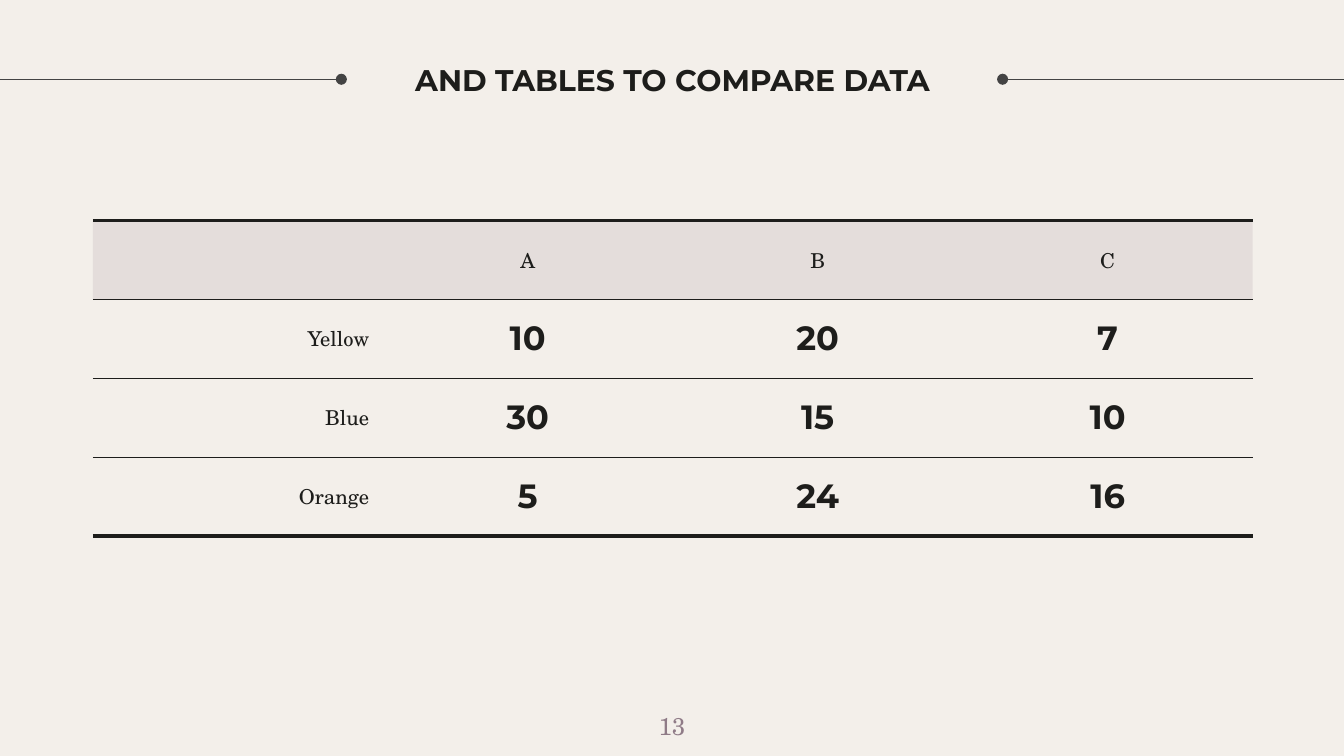
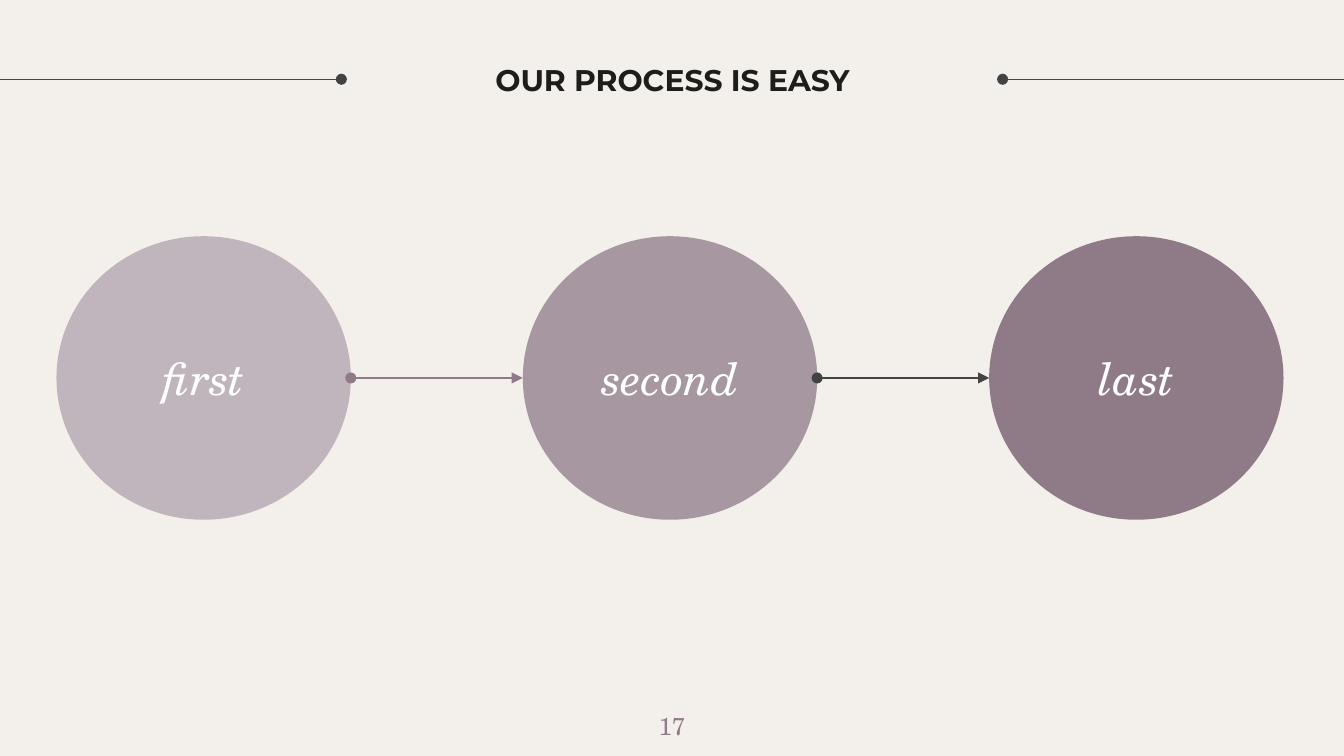
"""Build two slides: a comparison table and a three-step process."""
from lxml import etree
from pptx import Presentation
from pptx import util as u
from pptx.dml.color import RGBColor
from pptx.enum import shapes, text
from pptx.oxml import ns

INK = RGBColor(0x1D, 0x1D, 0x1B)
GREY = RGBColor(0x43, 0x43, 0x43)
CREAM = RGBColor(0xF3, 0xEF, 0xEA)
WHITE = RGBColor(0xFF, 0xFF, 0xFF)
MAUVE = RGBColor(0x8F, 0x7B, 0x87)
MID_MAUVE = RGBColor(0xA7, 0x97, 0xA1)
PALE_MAUVE = RGBColor(0xC0, 0xB5, 0xBC)
SANS, SERIF = "Montserrat", "TeX Gyre Schola"
CENTER, RIGHT = text.PP_ALIGN.CENTER, text.PP_ALIGN.RIGHT
TOP, MIDDLE = text.MSO_ANCHOR.TOP, text.MSO_ANCHOR.MIDDLE

SLIDE_WIDTH = 10
SLIDE_HEIGHT = SLIDE_WIDTH * 9 / 16
RULE_Y = 0.59
RULES = [(2.54, 0), (7.46, SLIDE_WIDTH)]

TABLE_TITLE, TABLE_NUMBER = "AND TABLES TO COMPARE DATA", 13
TABLE_ROWS = [
    ("", "A", "B", "C"),
    ("Yellow", "10", "20", "7"),
    ("Blue", "30", "15", "10"),
    ("Orange", "5", "24", "16"),
]
TABLE_BOX = (0.69, 1.64, 8.63, 2.35)
THIN, THICK = 0.75, 2.25
HEADER_ALPHA = 15

PROCESS_TITLE, PROCESS_NUMBER = "OUR PROCESS IS EASY", 17
STEPS = [("first", PALE_MAUVE), ("second", MID_MAUVE), ("last", MAUVE)]
ARROW_COLORS = [MAUVE, GREY]
STEP_LEFT, STEP_WIDTH, STEP_HEIGHT, STEP_PITCH = 0.42, 2.19, 2.11, 3.47
STEP_TOP = (SLIDE_HEIGHT - STEP_HEIGHT) / 2


def inches(*lengths):
    return [u.Inches(length) for length in lengths]


def write(frame, words, font, size, color, align=CENTER, bold=False, italic=False):
    frame.text = words
    para = frame.paragraphs[0]
    para.alignment = align
    for span in para.runs:
        span.font.name, span.font.size = font, u.Pt(size)
        span.font.bold, span.font.italic = bold, italic
        span.font.color.rgb = color


def set_up_frame(frame, anchor):
    frame.word_wrap = True
    frame.vertical_anchor = anchor
    frame.margin_left = frame.margin_right = u.Inches(0.1)
    frame.margin_top = frame.margin_bottom = u.Inches(0.1)


def add_text(page, place, words, font, size, color, anchor, bold=False):
    frame = page.shapes.add_textbox(*inches(*place)).text_frame
    set_up_frame(frame, anchor)
    write(frame, words, font, size, color, bold=bold)


def add_line(page, start, end, y, color, arrow=False):
    line = page.shapes.add_connector(
        shapes.MSO_CONNECTOR.STRAIGHT, *inches(start, y, end, y))
    line.line.color.rgb = color
    line.line.width = u.Pt(THIN)
    outline = line.line._get_or_add_ln()
    etree.SubElement(outline, ns.qn("a:headEnd"), type="oval")
    if arrow:
        etree.SubElement(outline, ns.qn("a:tailEnd"), type="triangle")
    etree.SubElement(line._element.spPr, ns.qn("a:effectLst"))


def add_page(deck, title, number):
    page = deck.slides.add_slide(deck.slide_layouts[6])
    page.background.fill.solid()
    page.background.fill.fore_color.rgb = CREAM
    for start, end in RULES:
        add_line(page, start, end, RULE_Y, GREY)
    add_text(page, (2.54, 0.12, 4.93, 0.94), title, SANS, 16, INK, MIDDLE, bold=True)
    add_text(page, (4.7, 5.19, 0.6, 0.43), str(number), SERIF, 13, MAUVE, TOP)
    return page


def set_borders(cell, top, bottom):
    properties = cell._tc.get_or_add_tcPr()
    widths = {"a:lnL": 0, "a:lnR": 0, "a:lnT": top, "a:lnB": bottom}
    for position, (tag, width) in enumerate(widths.items()):
        border = etree.Element(ns.qn(tag), w=str(u.Pt(width)))
        if width:
            fill = etree.SubElement(border, ns.qn("a:solidFill"))
            etree.SubElement(fill, ns.qn("a:srgbClr"), val=str(INK))
        else:
            etree.SubElement(border, ns.qn("a:noFill"))
        properties.insert(position, border)


def fill_cell(cell, is_header):
    if not is_header:
        cell.fill.background()
        return
    cell.fill.solid()
    cell.fill.fore_color.rgb = MAUVE
    color = cell._tc.tcPr.find(".//" + ns.qn("a:srgbClr"))
    etree.SubElement(color, ns.qn("a:alpha"), val=str(HEADER_ALPHA * 1000))


def add_comparison(page):
    row_count, column_count = len(TABLE_ROWS), len(TABLE_ROWS[0])
    table = page.shapes.add_table(row_count, column_count, *inches(*TABLE_BOX)).table
    table.first_row = table.horz_banding = False
    for r, row in enumerate(TABLE_ROWS):
        for c, words in enumerate(row):
            cell = table.cell(r, c)
            cell.vertical_anchor = MIDDLE
            cell.margin_left = cell.margin_right = u.Inches(0.1)
            cell.margin_top = cell.margin_bottom = u.Inches(0.07)
            is_value = r > 0 and c > 0
            font, size = (SANS, 18) if is_value else (SERIF, 11)
            align = RIGHT if c == 0 else CENTER
            write(cell.text_frame, words, font, size, INK, align, bold=is_value)
            fill_cell(cell, r == 0)
            set_borders(cell, THICK if r == 0 else THIN,
                        THICK if r == row_count - 1 else THIN)


def add_process(page):
    lefts = [STEP_LEFT + i * STEP_PITCH for i in range(len(STEPS))]
    for left, (words, color) in zip(lefts, STEPS):
        circle = page.shapes.add_shape(
            shapes.MSO_SHAPE.OVAL, *inches(left, STEP_TOP, STEP_WIDTH, STEP_HEIGHT))
        circle.shadow.inherit = False
        circle.fill.solid()
        circle.fill.fore_color.rgb = color
        circle.line.fill.background()
        set_up_frame(circle.text_frame, MIDDLE)
        write(circle.text_frame, words, SERIF, 24, WHITE, italic=True)
    for left, next_left, color in zip(lefts, lefts[1:], ARROW_COLORS):
        add_line(page, left + STEP_WIDTH, next_left,
                 STEP_TOP + STEP_HEIGHT / 2, color, arrow=True)


def main():
    deck = Presentation()
    deck.slide_width, deck.slide_height = inches(SLIDE_WIDTH, SLIDE_HEIGHT)
    add_comparison(add_page(deck, TABLE_TITLE, TABLE_NUMBER))
    add_process(add_page(deck, PROCESS_TITLE, PROCESS_NUMBER))
    deck.save("out.pptx")


if __name__ == "__main__":
    main()
